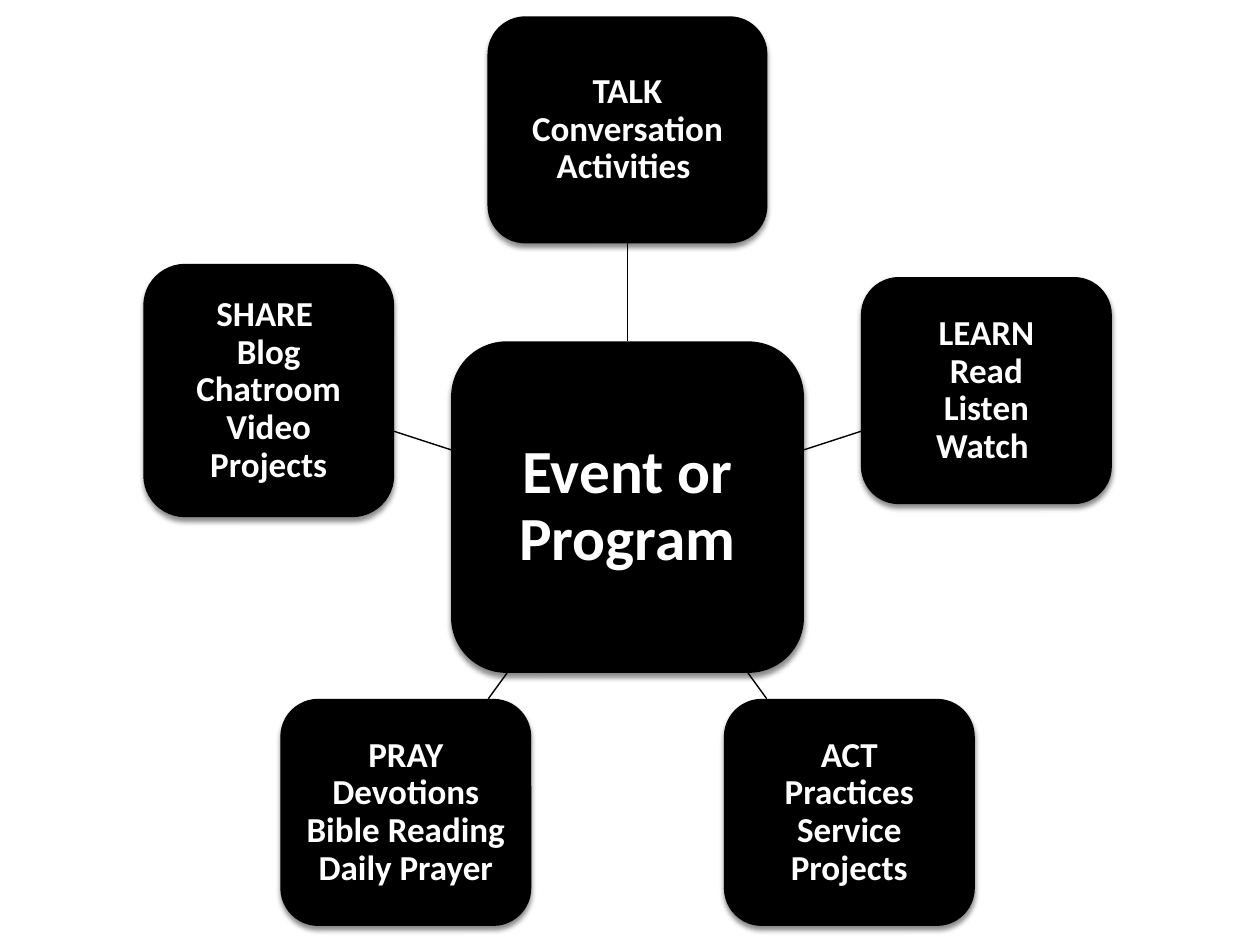
from math import cos, radians, sin

from lxml import etree
from pptx import Presentation
from pptx.dml.color import RGBColor
from pptx.enum.shapes import MSO_CONNECTOR, MSO_SHAPE
from pptx.enum.text import MSO_ANCHOR, PP_ALIGN
from pptx.oxml import parse_xml
from pptx.oxml.ns import nsdecls, qn
from pptx.util import Pt

ROUNDED = MSO_SHAPE.ROUNDED_RECTANGLE
STRAIGHT = MSO_CONNECTOR.STRAIGHT
CENTER = PP_ALIGN.CENTER
MIDDLE = MSO_ANCHOR.MIDDLE

BLACK = RGBColor(0, 0, 0)
WHITE = RGBColor(255, 255, 255)
FONT = "Calibri"

# Hub and the circle on which the activities sit, in points
HUB_CENTER = (358.6, 289.8)
HUB_SIZE = (201.6, 189.4)
RADIUS = 215.6

# Text (\v is a line break) and box size, clockwise from the top
ACTIVITIES = [
    ("TALK\vConversation Activities ", (160, 129.8)),
    ("LEARN\vRead\vListen\vWatch ", (143.4, 129.8)),
    ("ACT\vPractices\vService\vProjects", (143.4, 129.8)),
    ("PRAY\vDevotions Bible Reading Daily Prayer", (143.4, 129.8)),
    ("SHARE \vBlog Chatroom\vVideo\vProjects", (143.4, 144.8)),
]


def write_text(frame, text, *, font_size, inset, color=WHITE, bold=True):
    frame.word_wrap = True
    frame.vertical_anchor = MIDDLE
    frame.margin_left = frame.margin_right = Pt(inset)
    frame.margin_top = frame.margin_bottom = Pt(inset)
    frame.text = text
    paragraph = frame.paragraphs[0]
    paragraph.alignment = CENTER
    paragraph.line_spacing = 0.9
    for run in paragraph.runs:
        run.font.name = FONT
        run.font.size = Pt(font_size)
        run.font.bold = bold
        run.font.color.rgb = color


def add_shadow(box):
    box.shadow.inherit = False
    effects = box._element.spPr.find(qn("a:effectLst"))
    effects.append(parse_xml(
        f'<a:outerShdw {nsdecls("a")} blurRad="{Pt(3)}" dist="{Pt(2.4)}" '
        f'dir="5400000" rotWithShape="0"><a:srgbClr val="{BLACK}">'
        '<a:alpha val="45000"/></a:srgbClr></a:outerShdw>'))


def add_box(slide, center, box_size, text, **text_format):
    (x, y), (width, height) = center, box_size
    box = slide.shapes.add_shape(
        ROUNDED, Pt(x - width / 2), Pt(y - height / 2), Pt(width), Pt(height))
    box.fill.solid()
    box.fill.fore_color.rgb = BLACK
    box.line.fill.background()
    add_shadow(box)
    write_text(box.text_frame, text, **text_format)


def edge_point(center, box_size, target):
    """Point where the ray from center to target leaves the box."""
    dx, dy = target[0] - center[0], target[1] - center[1]
    share = 1 / max(abs(dx) / (box_size[0] / 2), abs(dy) / (box_size[1] / 2))
    return center[0] + share * dx, center[1] + share * dy


def add_spoke(slide, start, end):
    spoke = slide.shapes.add_connector(STRAIGHT, *map(Pt, start + end))
    spoke.line.color.rgb = BLACK
    spoke.line.width = Pt(0.79)
    etree.SubElement(spoke._element.spPr, qn("a:effectLst"))


def main():
    deck = Presentation()
    deck.slide_width, deck.slide_height = Pt(720), Pt(540)
    slide = deck.slides.add_slide(deck.slide_layouts[6])

    # Hub
    add_box(slide, HUB_CENTER, HUB_SIZE, "Event or Program",
            font_size=35, inset=7)

    # Activities at equal angles, each joined to the hub
    for index, (text, box_size) in enumerate(ACTIVITIES):
        angle = radians(index * 360 / len(ACTIVITIES) - 90)
        center = (HUB_CENTER[0] + RADIUS * cos(angle),
                  HUB_CENTER[1] + RADIUS * sin(angle))
        add_spoke(slide, edge_point(HUB_CENTER, HUB_SIZE, center),
                  edge_point(center, box_size, HUB_CENTER))
        add_box(slide, center, box_size, text, font_size=20, inset=4)

    deck.save("out.pptx")


if __name__ == "__main__":
    main()
